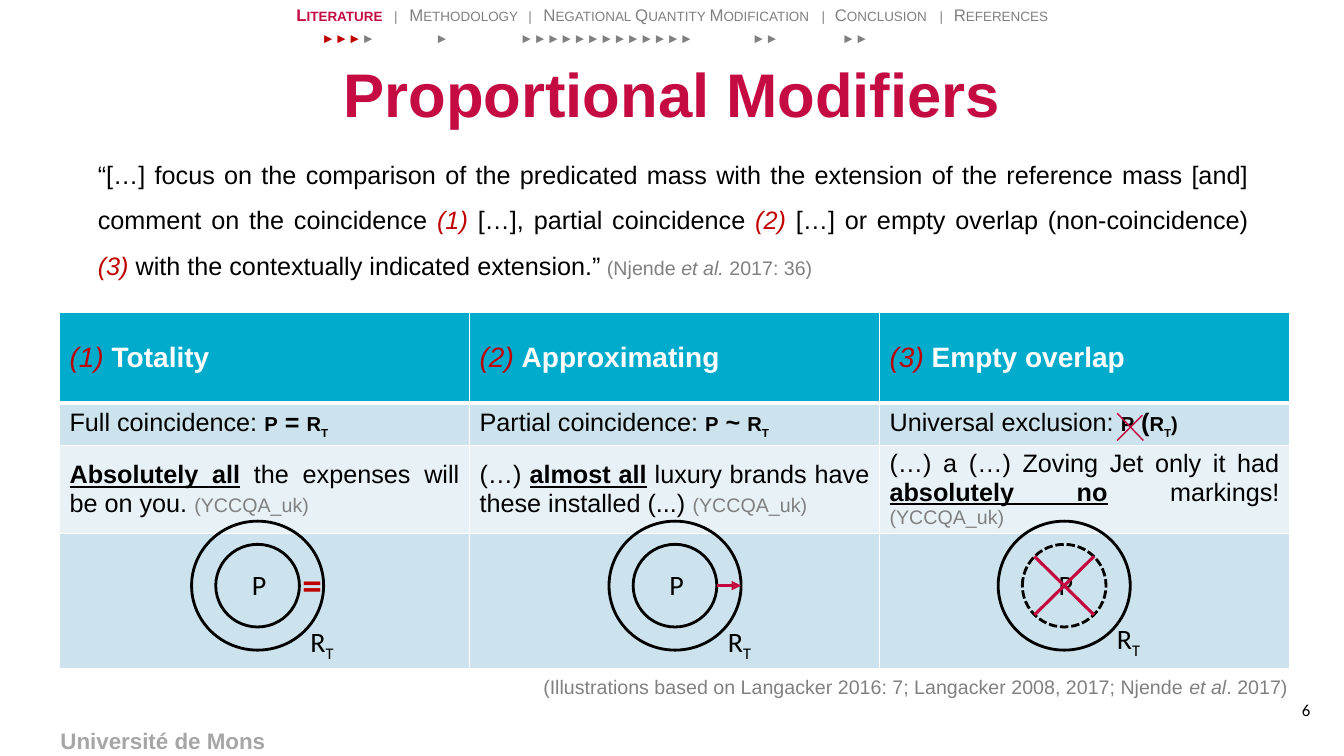
from lxml.etree import SubElement
from pptx import Presentation
from pptx.dml.color import RGBColor
from pptx.enum.dml import MSO_LINE
from pptx.enum.shapes import MSO_CONNECTOR, MSO_SHAPE
from pptx.enum.text import MSO_ANCHOR, PP_ALIGN
from pptx.oxml.ns import qn
from pptx.util import Inches, Pt

HUES = {"title": "C40C42", "red": "C00000", "cross": "C4073F", "black": "000000",
        "gray": "808080", "foot": "A6A6A6", "white": "FFFFFF",
        "head": "00ABCC", "band": "CCE2EC", "pale": "E7F1F6"}
RGB = {name: RGBColor.from_string(code) for name, code in HUES.items()}

# Run formats
PLAIN = {"size": 18}
STRONG = {"size": 18, "bold": True}
CAPS = STRONG | {"cap": "small"}
SUB = CAPS | {"baseline": "-25000"}
KEY = STRONG | {"underline": True}
MARK = {"size": 18, "italic": True, "hue": "red"}
CITE = {"size": 14, "hue": "gray"}
SLANT = CITE | {"italic": True}
NOTE = {"size": 20, "name": "Calibri"}
NAV = {"size": 12, "hue": "gray", "cap": "small"}


def write(frame, runs, align=PP_ALIGN.LEFT, space=None, tabs=()):
    """Fill the first paragraph of a frame with (text, format) runs."""
    para = frame.paragraphs[0]
    para.alignment = align
    if space:
        para.line_spacing = space
    if tabs:
        stops = SubElement(para._p.get_or_add_pPr(), qn("a:tabLst"))
        for stop in tabs:
            SubElement(stops, qn("a:tab"), pos=str(Inches(stop)), algn="l")
    for text, form in runs:
        run = para.add_run()
        run.text = text
        form = {"name": "Arial", "hue": "black"} | form
        for key, value in form.items():
            if key == "hue":
                run.font.color.rgb = RGB[value]
            elif key in ("cap", "baseline"):
                run.font._element.set(key, value)
            else:
                setattr(run.font, key, Pt(value) if key == "size" else value)


def label(left, top, width, height, runs, wrap=True, inset=0.1, middle=False, **form):
    """Add a text box."""
    frame = slide.shapes.add_textbox(*map(Inches, (left, top, width, height))).text_frame
    frame.word_wrap = wrap
    frame.margin_left = Inches(inset)
    frame.vertical_anchor = MSO_ANCHOR.MIDDLE if middle else MSO_ANCHOR.TOP
    write(frame, runs, **form)


deck = Presentation()
deck.slide_width, deck.slide_height = Inches(13.33), Inches(7.5)
slide = deck.slides.add_slide(deck.slide_layouts[6])

# Navigation bar and progress marks
label(0, 0, 13.33, 0.25,
      [("Literature", NAV | {"hue": "title", "bold": True}),
       ("\t|\tMethodology\t|\tNegational Quantity Modification\t|\tConclusion\t|\tReferences", NAV)],
      inset=2.94, tabs=(0.97, 1.12, 2.3, 2.45, 5.21, 5.34, 6.38, 6.52))
label(3.06, 0.22, 10.27, 0.52,
      [("►" * 3, NAV | {"hue": "red"}),
       ("\t".join("►" * count for count in (1, 1, 13, 2, 2)), NAV)],
      inset=0.13, tabs=(1.13, 1.97, 4.27, 5.16))

# Title, footer and page number
label(0.67, 0.3, 12, 1.25, [("Proportional Modifiers", {"size": 44, "bold": True, "hue": "title"})],
      align=PP_ALIGN.CENTER, middle=True)
label(-0.01, 7.16, 3.25, 0.37, [("Université de Mons", {"size": 16, "bold": True, "hue": "foot"})],
      align=PP_ALIGN.CENTER)
label(12.58, 6.89, 0.75, 0.3, [("6", {"size": 12, "name": "Calibri"})],
      align=PP_ALIGN.CENTER, middle=True)

# Quotation
label(0.67, 1.38, 11.81, 1.6,
      [("“[…] focus on the comparison of the predicated mass with the extension of the "
        "reference mass [and] comment on the coincidence ", PLAIN), ("(1)", MARK),
       (" […], partial coincidence ", PLAIN), ("(2)", MARK),
       (" […] or empty overlap (non-coincidence) ", PLAIN), ("(3)", MARK),
       (" with the contextually indicated extension.”", PLAIN), (" ", {"size": 16}),
       ("(Njende ", CITE), ("et al. ", SLANT), ("2017: 36)", CITE)],
      inset=0.3, align=PP_ALIGN.JUSTIFY, space=1.5)

# Table
HEAD = {"size": 20, "bold": True, "hue": "white"}
heads = [[(f"({num}) ", MARK | {"size": 20}), (name, HEAD)]
         for num, name in enumerate(("Totality", "Approximating", "Empty overlap"), 1)]
rules = [[(lead, PLAIN), ("p", CAPS), (sign, STRONG), ("r", CAPS), ("t", SUB)]
         for lead, sign in (("Full coincidence: ", " = "), ("Partial coincidence: ", " ~ "),
                            ("Universal exclusion: ", " ("))]
rules[2].append((")", CAPS))
source = ("(YCCQA_uk)", CITE)
quotes = [
    [("Absolutely all", KEY), (" the expenses will be on you. ", PLAIN), source],
    [("(…) ", PLAIN), ("almost all", KEY),
     (" luxury brands have these installed (...) ", PLAIN), source],
    [("(…) a (…) Zoving Jet only it had ", PLAIN), ("absolutely no", KEY),
     (" markings! ", PLAIN), source]]
rows = [(0.9, "head", heads), (0.42, "band", rules), (0.87, "pale", quotes),
        (1.34, "band", [[], [], []])]
grid = slide.shapes.add_table(4, 3, *map(Inches, (0.59, 3.1, 12.2, 3.53))).table
for col in grid.columns:
    col.width = Inches(12.2 / 3)
for i, (height, fill, cells) in enumerate(rows):
    grid.rows[i].height = Inches(height)
    for j, runs in enumerate(cells):
        cell = grid.cell(i, j)
        cell.vertical_anchor = MSO_ANCHOR.MIDDLE
        cell.margin_top = cell.margin_bottom = Inches(0.01)
        write(cell.text_frame, runs, align=PP_ALIGN.JUSTIFY if i else PP_ALIGN.LEFT)
        props = cell._tc.get_or_add_tcPr()
        for side in "LRTB":
            thick = (i, side) in ((0, "B"), (1, "T"))
            edge = SubElement(props, qn("a:ln" + side), w=str(Pt(3 if thick else 1)))
            SubElement(SubElement(edge, qn("a:solidFill")), qn("a:srgbClr"), val=HUES["white"])
        cell.fill.solid()
        cell.fill.fore_color.rgb = RGB[fill]

# Circle diagrams
for left, dash, drop in ((1.9, False, 6.15), (6.04, False, 6.15), (9.9, True, 6.12)):
    for x, y, wide, high, inner in ((left, 5.17, 1.31, 1.28, False),
                                    (left + 0.24, 5.4, 0.83, 0.82, True)):
        ring = slide.shapes.add_shape(MSO_SHAPE.OVAL, *map(Inches, (x, y, wide, high)))
        ring.shadow.inherit = False
        ring.fill.background()
        ring.line.color.rgb = RGB["black"]
        ring.line.width = Pt(2)
        if dash and inner:
            ring.line.dash_style = MSO_LINE.SQUARE_DOT
    label(left + 0.5, 5.58, 0.31, 0.44, [("P", NOTE)], wrap=False)
    label(left + 1.08, drop, 0.46, 0.44, [("R", NOTE), ("T", NOTE | {"baseline": "-25000"})],
          wrap=False)
label(2.9, 5.51, 0.31, 0.57, [("=", NOTE | {"size": 28, "bold": True, "hue": "red"})], wrap=False)

# Crosses and arrow
for x1, y1, x2, y2, width, arrow in ((10.26, 5.52, 10.85, 6.1, 2.25, False),
                                     (10.85, 5.52, 10.26, 6.1, 2.25, False),
                                     (11.08, 4.1, 11.34, 4.37, 1, False),
                                     (11.33, 4.12, 11.08, 4.37, 1, False),
                                     (7.11, 5.81, 7.35, 5.81, 2.25, True)):
    line = slide.shapes.add_connector(MSO_CONNECTOR.STRAIGHT, *map(Inches, (x1, y1, x2, y2)))
    line.line.color.rgb = RGB["cross"]
    line.line.width = Pt(width)
    if arrow:
        SubElement(line.line._get_or_add_ln(), qn("a:tailEnd"), type="triangle")
    SubElement(line._element.spPr, qn("a:effectLst"))

# Credit line
label(5.29, 6.53, 8.04, 0.41,
      [("(Illustrations based on Langacker 2016: 7; Langacker 2008, 2017; Njende ", CITE),
       ("et al", SLANT), (". 2017)", CITE)], space=1.5)

deck.save("out.pptx")
